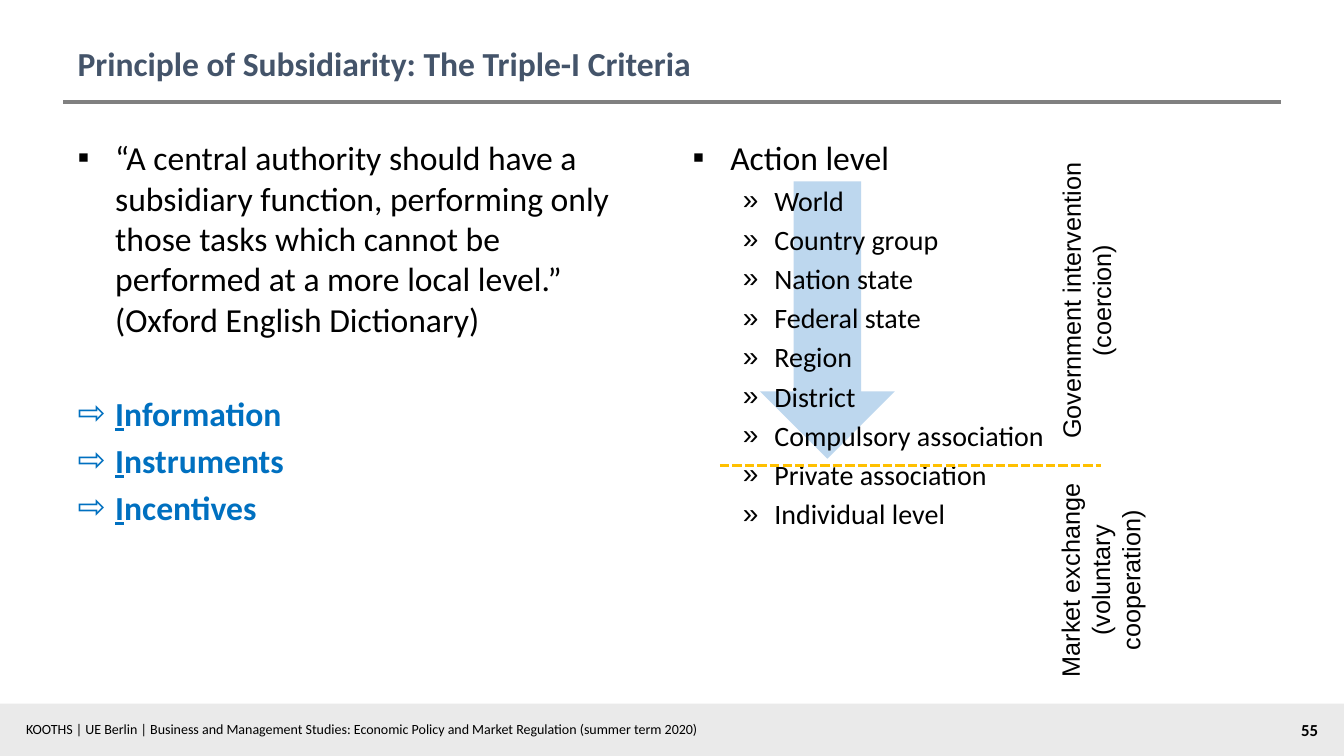
from dataclasses import dataclass

from lxml import etree
from pptx import Presentation, util as u
from pptx.dml.color import RGBColor
from pptx.enum import dml, shapes, text
from pptx.oxml.ns import qn


@dataclass(frozen=True)
class Theme:
    ink: str = "000000"
    heading: str = "44546A"
    accent: str = "0070C0"
    band: str = "EAEAEA"
    rule: str = "808080"
    arrow: str = "BDD7EE"
    divider: str = "FFC000"
    body_font: str = "Calibri"
    label_font: str = "Arial"
    large: int = 24
    medium: int = 20
    label: int = 18
    number: int = 12
    footer: int = 10


THEME = Theme()

# Per list level: bullet, left margin and hanging indent in cm, type size
LEVELS = [("▪", 0.95, 0.95, THEME.large), ("»", 2.06, 0.79, THEME.medium)]

QUOTE = ("“A central authority should have a subsidiary function, performing only "
         "those tasks which cannot be performed at a more local level.” "
         "(Oxford English Dictionary)")
CRITERIA = ["Information", "Instruments", "Incentives"]
ACTION_LEVELS = ["World", "Country group", "Nation state", "Federal state", "Region",
                 "District", "Compulsory association", "Private association",
                 "Individual level"]
FOOTER = ("KOOTHS | UE Berlin | Business and Management Studies: "
          "Economic Policy and Market Regulation (summer term 2020)")


def set_all(target, **values):
    for name, value in values.items():
        setattr(target, name, value)


def place(shape, box):
    for name, length in zip(("left", "top", "width", "height"), box):
        setattr(shape, name, u.Cm(length))


def style(run, size, color=THEME.ink, font=THEME.body_font, **extra):
    set_all(run.font, size=u.Pt(size), name=font, **extra)
    run.font.color.rgb = RGBColor.from_string(color)


def add_block(slide, preset, box, color):
    block = slide.shapes.add_shape(preset, *map(u.Cm, box))
    block.shadow.inherit = False
    block.fill.solid()
    block.fill.fore_color.rgb = RGBColor.from_string(color)
    block.line.fill.background()
    return block


def add_rule(slide, left, right, y, color, dash=None):
    rule = slide.shapes.add_connector(
        shapes.MSO_CONNECTOR.STRAIGHT, u.Cm(left), u.Cm(y), u.Cm(right), u.Cm(y))
    set_all(rule.line, width=u.Pt(2.25), dash_style=dash)
    rule.line.color.rgb = RGBColor.from_string(color)
    etree.SubElement(rule._element.spPr, qn("a:effectLst"))


def add_label(slide, wording, box, size, align=text.PP_ALIGN.LEFT, rotation=0,
              wrap=True, **look):
    label = slide.shapes.add_textbox(*map(u.Cm, box))
    label.rotation = rotation
    label.text_frame.word_wrap = wrap
    paragraph = label.text_frame.paragraphs[0]
    set_all(paragraph, text=wording, alignment=align)
    for run in paragraph.runs:
        style(run, size, **look)


def fill_title(title, wording, box):
    place(title, box)
    set_all(title.text_frame, text=wording, vertical_anchor=text.MSO_ANCHOR.BOTTOM,
            auto_size=text.MSO_AUTO_SIZE.NONE)
    heading = title.text_frame.paragraphs[0]
    heading.alignment = text.PP_ALIGN.LEFT
    style(heading.runs[0], THEME.large, THEME.heading, bold=True)


def open_list(body, box):
    place(body, box)
    body.text_frame.auto_size = text.MSO_AUTO_SIZE.NONE
    return body.text_frame


def add_item(frame, level=0, bullet=None, gap=None):
    """Start a bulleted paragraph, reusing the empty first one of the frame."""
    symbol, margin, hanging, size = LEVELS[level]
    first = frame.paragraphs[0]
    is_first = not first.runs
    item = first if is_first else frame.add_paragraph()
    space = 0 if is_first else gap or size * 0.2
    set_all(item, level=level, space_before=u.Pt(space))
    props = item._p.get_or_add_pPr()
    props.set("marL", str(u.Cm(margin)))
    props.set("indent", str(-u.Cm(hanging)))
    etree.SubElement(props, qn("a:buFont"), typeface=THEME.label_font)
    etree.SubElement(props, qn("a:buChar"), char=bullet or symbol)
    return item


def add_words(item, wording, **look):
    run = item.add_run()
    run.text = wording
    style(run, LEVELS[item.level][3], **look)


def fill_criteria(frame):
    add_words(add_item(frame), QUOTE)
    for index, criterion in enumerate(CRITERIA):
        item = add_item(frame, bullet="⇨", gap=None if index else 38.4)
        for part, underline in ((criterion[0], True), (criterion[1:], False)):
            add_words(item, part, color=THEME.accent, bold=True, underline=underline)


def fill_action_levels(frame):
    add_words(add_item(frame), "Action level")
    for name in ACTION_LEVELS:
        add_words(add_item(frame, level=1), name)


def main():
    deck = Presentation()
    set_all(deck, slide_width=u.Cm(33.87), slide_height=u.Cm(19.05))
    slide = deck.slides.add_slide(deck.slide_layouts[3])
    title, criteria, actions = slide.placeholders

    fill_title(title, "Principle of Subsidiarity: The Triple-I Criteria",
               (1.7, 0.43, 30.48, 1.8))
    fill_criteria(open_list(criteria, (1.7, 3.33, 14.96, 13.69)))
    fill_action_levels(open_list(actions, (17.2, 3.33, 14.96, 13.69)))

    arrow = add_block(slide, shapes.MSO_SHAPE.DOWN_ARROW,
                      (19.15, 4.57, 3.4, 6.99), THEME.arrow)
    title._element.addprevious(arrow._element)  # behind the list

    add_rule(slide, 1.6, 32.28, 2.57, THEME.rule)
    add_rule(slide, 18.14, 27.74, 11.73, THEME.divider, dml.MSO_LINE.SQUARE_DOT)

    for wording, box in (
            ("Government intervention\n(coercion)", (23.62, 6.68, 7.52, 1.8)),
            ("Market exchange\n(voluntary\ncooperation)", (25.02, 13.34, 5.44, 2.57))):
        add_label(slide, wording, box, THEME.label, text.PP_ALIGN.CENTER,
                  rotation=270, wrap=False, font=THEME.label_font)

    add_block(slide, shapes.MSO_SHAPE.RECTANGLE, (0, 17.73, 33.87, 1.32), THEME.band)
    add_label(slide, FOOTER, (0.41, 18.03, 25.83, 0.69), THEME.footer)
    add_label(slide, "55", (28.14, 18.01, 5.33, 0.76), THEME.number,
              text.PP_ALIGN.RIGHT, bold=True)
    deck.save("out.pptx")


if __name__ == "__main__":
    main()
